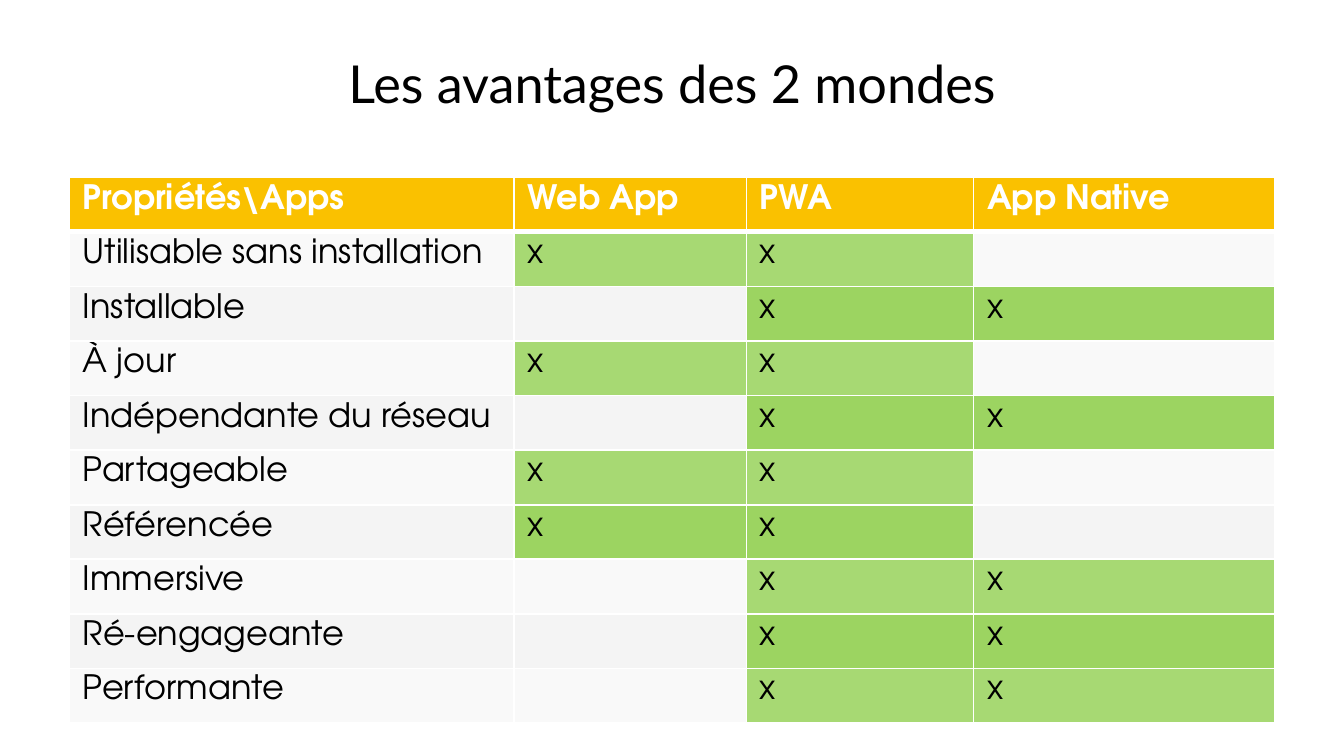
import dataclasses

import pptx
import pptx.dml.color
import pptx.enum.text
import pptx.oxml
import pptx.oxml.ns
import pptx.util


@dataclasses.dataclass(frozen=True)
class Theme:
    title_font: str = "Lato"
    table_font: str = "TeX Gyre Adventor"
    title_size: int = 28
    table_size: int = 18
    text: str = "000000"
    light: str = "FFFFFF"
    header: str = "FAC100"
    available: str = "92D050"
    missing: str = "989898"
    available_opacity: tuple = (80, 90)
    missing_opacity: tuple = (5, 10)
    rule: int = 1
    header_rule: int = 3


THEME = Theme()
SLIDE_WIDTH = pptx.util.Inches(10)
SLIDE_HEIGHT = SLIDE_WIDTH * 9 // 16
TABLE_TOP, TABLE_HEIGHT = pptx.util.Inches(1.32), pptx.util.Inches(4.06)
COLUMN_WIDTHS = [pptx.util.Inches(width) for width in (3.31, 1.73, 1.69, 2.24)]
HEADERS = ("Propriétés\\Apps", "Web App", "PWA", "App Native")
WEB, PWA, NATIVE = HEADERS[1:]
FEATURES = (
    ("Utilisable sans installation", (WEB, PWA)),
    ("Installable", (PWA, NATIVE)),
    ("À jour", (WEB, PWA)),
    ("Indépendante du réseau", (PWA, NATIVE)),
    ("Partageable", (WEB, PWA)),
    ("Référencée", (WEB, PWA)),
    ("Immersive", (PWA, NATIVE)),
    ("Ré-engageante", (PWA, NATIVE)),
    ("Performante", (PWA, NATIVE)),
)


def apply_format(target, values):
    for name, value in values.items():
        setattr(target, name, value)


def write_text(paragraph, text, color, **values):
    run = paragraph.add_run()
    run.text = text
    apply_format(run.font, values)
    run.font.color.rgb = pptx.dml.color.RGBColor.from_string(color)


def fill_cell(cell, color, opacity=100):
    cell.fill.solid()
    cell.fill.fore_color.rgb = pptx.dml.color.RGBColor.from_string(color)
    if opacity < 100:
        properties = cell._tc.get_or_add_tcPr()
        color_element = properties.find(".//" + pptx.oxml.ns.qn("a:srgbClr"))
        alpha = pptx.oxml.parse_xml(
            f'<a:alpha {pptx.oxml.ns.nsdecls("a")} val="{opacity * 1000}"/>'
        )
        color_element.append(alpha)


def border_cell(cell, **widths):
    properties = cell._tc.get_or_add_tcPr()
    for position, side in enumerate(("L", "R", "T", "B")):
        width = pptx.util.Pt(widths.get(side, THEME.rule))
        border = pptx.oxml.parse_xml(
            f'<a:ln{side} {pptx.oxml.ns.nsdecls("a")} w="{width}"><a:solidFill>'
            f'<a:srgbClr val="{THEME.light}"/></a:solidFill></a:ln{side}>'
        )
        properties.insert(position, border)


def write_cell(cell, text, color, bold=False):
    if text:
        write_text(
            cell.text_frame.paragraphs[0], text, color, bold=bold,
            name=THEME.table_font, size=pptx.util.Pt(THEME.table_size),
        )


def add_title(slide, text):
    title = slide.shapes.title
    apply_format(title, {
        "left": 0,
        "top": pptx.util.Inches(0.33),
        "width": SLIDE_WIDTH,
        "height": pptx.util.Inches(0.38),
    })
    apply_format(title.text_frame, {
        "word_wrap": True,
        "auto_size": pptx.enum.text.MSO_AUTO_SIZE.NONE,
        "vertical_anchor": pptx.enum.text.MSO_ANCHOR.TOP,
    })
    paragraph = title.text_frame.paragraphs[0]
    paragraph.alignment = pptx.enum.text.PP_ALIGN.CENTER
    write_text(
        paragraph, text, THEME.text,
        name=THEME.title_font, size=pptx.util.Pt(THEME.title_size),
    )


def add_comparison(slide):
    width = sum(COLUMN_WIDTHS)
    left = (SLIDE_WIDTH - width) // 2
    table = slide.shapes.add_table(
        len(FEATURES) + 1, len(HEADERS), left, TABLE_TOP, width, TABLE_HEIGHT
    ).table
    for column, column_width in zip(table.columns, COLUMN_WIDTHS):
        column.width = column_width

    for column, header in enumerate(HEADERS):
        cell = table.cell(0, column)
        write_cell(cell, header, THEME.light, bold=True)
        fill_cell(cell, THEME.header)
        border_cell(cell, B=THEME.header_rule)

    for row, (feature, apps) in enumerate(FEATURES, start=1):
        band = (row - 1) % 2
        for column, header in enumerate(HEADERS):
            cell = table.cell(row, column)
            available = header in apps
            mark = "x" if available else ""
            write_cell(cell, mark if column else feature, THEME.text)
            if available:
                fill_cell(cell, THEME.available, THEME.available_opacity[band])
            else:
                fill_cell(cell, THEME.missing, THEME.missing_opacity[band])
            border_cell(cell, T=THEME.header_rule if row == 1 else THEME.rule)


def main():
    presentation = pptx.Presentation()
    apply_format(presentation, {
        "slide_width": SLIDE_WIDTH,
        "slide_height": SLIDE_HEIGHT,
    })
    slide = presentation.slides.add_slide(presentation.slide_layouts[5])
    add_comparison(slide)
    add_title(slide, "Les avantages des 2 mondes")
    presentation.save("out.pptx")


if __name__ == "__main__":
    main()
